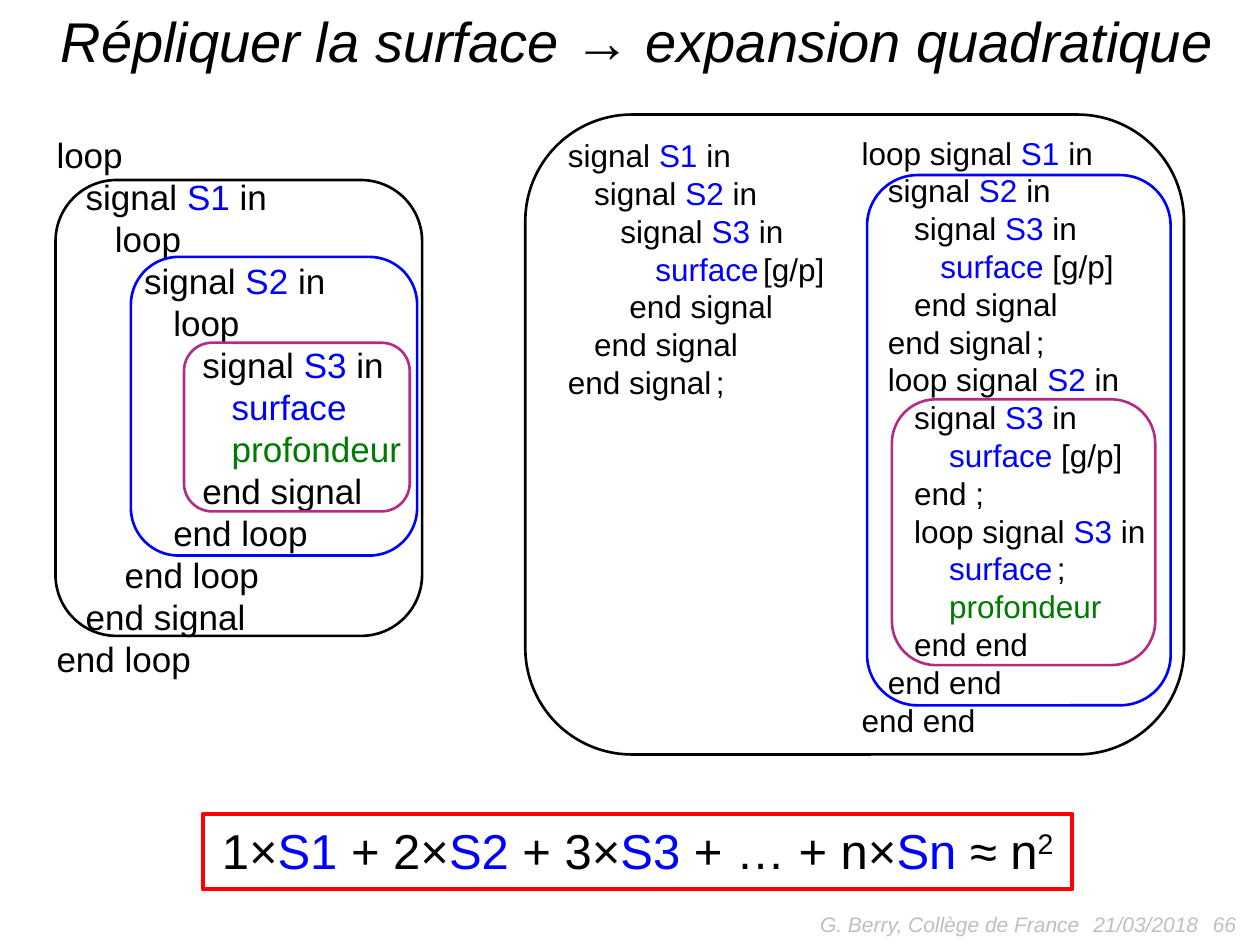
from dataclasses import dataclass

from pptx import Presentation
from pptx.dml.color import RGBColor
from pptx.enum.shapes import MSO_SHAPE
from pptx.enum.text import MSO_ANCHOR, PP_ALIGN
from pptx.util import Cm, Pt

BLACK, BLUE, GREEN = "000000", "0000FF", "007A00"
PURPLE, RED, GREY = "B22C85", "FF0000", "BFBFBF"
WORD_COLOURS = {"S1": BLUE, "S2": BLUE, "S3": BLUE, "Sn": BLUE,
                "surface": BLUE, "profondeur": GREEN}
SPACE_WIDTH = 0.278  # width of a space in Arial, in ems


@dataclass
class Box:
    left: float
    top: float
    width: float
    height: float

    def lengths(self) -> list:
        return [Cm(v) for v in (self.left, self.top, self.width, self.height)]


@dataclass
class Code:
    box: Box
    size: int
    lines: list  # (indent in spaces, fragments parted by "|")


@dataclass
class Frame:
    box: Box
    colour: str


@dataclass
class Label:
    box: Box
    text: str
    size: int
    align: PP_ALIGN
    colour: str = BLACK
    anchor: MSO_ANCHOR = MSO_ANCHOR.MIDDLE


def rgb(colour: str) -> RGBColor:
    return RGBColor.from_string(colour)


def set_format(target, values: dict) -> None:
    for name, value in values.items():
        setattr(target, name, value)


def add_run(paragraph, text: str, size: float, colour: str, italic=None):
    run = paragraph.add_run()
    run.text = text
    set_format(run.font, {"name": "Arial", "size": Pt(size), "italic": italic})
    run.font.color.rgb = rgb(colour)
    return run


def write_fragments(paragraph, text: str, size: int) -> None:
    """Colour each fragment by its word; "~" is a thin space, "^" a superscript."""
    for fragment in text.split("|"):
        if fragment == "~":
            add_run(paragraph, " ", size / 2, BLACK)
        elif fragment.startswith("^"):
            exponent = add_run(paragraph, fragment[1:], size, BLACK)
            exponent.font._element.set("baseline", "30000")
        else:
            colour = WORD_COLOURS.get(fragment.strip(), BLACK)
            add_run(paragraph, fragment, size, colour)


def add_label(slide, label: Label) -> None:
    frame = slide.shapes.add_textbox(*label.box.lengths()).text_frame
    set_format(frame, {"word_wrap": True, "vertical_anchor": label.anchor})
    paragraph = frame.paragraphs[0]
    paragraph.alignment = label.align
    add_run(paragraph, label.text, label.size, label.colour, italic=True)


def add_code(slide, code: Code) -> None:
    frame = slide.shapes.add_textbox(*code.box.lengths()).text_frame
    frame.word_wrap = True
    for number, (indent, text) in enumerate(code.lines):
        paragraph = frame.add_paragraph() if number else frame.paragraphs[0]
        margin = Pt(indent * SPACE_WIDTH * code.size)
        paragraph._p.get_or_add_pPr().set("marL", str(int(margin)))
        write_fragments(paragraph, text, code.size)


def add_outline(slide, preset: MSO_SHAPE, frame: Frame, weight: float):
    shape = slide.shapes.add_shape(preset, *frame.box.lengths())
    shape.shadow.inherit = False
    shape.fill.background()
    shape.line.color.rgb = rgb(frame.colour)
    shape.line.width = Pt(weight)
    return shape


LABELS = [
    Label(Box(0.3, 0, 25.1, 1.63), "Répliquer la surface → expansion quadratique",
          32, PP_ALIGN.CENTER, anchor=MSO_ANCHOR.TOP),
    Label(Box(13.97, 18.24, 8.05, 0.8), "G. Berry, Collège de France",
          12, PP_ALIGN.RIGHT, GREY),
    Label(Box(21.79, 18.24, 3.3, 0.8), "21/03/2018", 12, PP_ALIGN.LEFT, GREY),
    Label(Box(19.25, 18.24, 5.92, 0.8), "66", 12, PP_ALIGN.RIGHT, GREY),
]

CODES = [
    # Nested loops
    Code(Box(0.89, 2.57, 8.05, 11.38), 20, [
        (0, "loop"), (3, "signal |S1| in"),
        (6, "loop"), (9, "signal |S2| in"),
        (12, "loop"), (15, "signal |S3| in"),
        (18, "surface"), (18, "profondeur"),
        (15, "end signal"), (12, "end loop"), (7, "end loop"),
        (3, "end signal"), (0, "end loop")]),
    # Replicated surface
    Code(Box(11.2, 2.62, 6.5, 6.4), 18, [
        (0, "signal |S1| in"), (3, "signal |S2| in"), (6, "signal |S3| in"),
        (10, "surface|~|[g/p]"),
        (7, "end signal"), (3, "end signal"), (0, "end signal|~|;")]),
    # Expanded loops
    Code(Box(17.12, 2.57, 8.08, 12.57), 18, [
        (0, "loop signal |S1| in"), (3, "signal |S2| in"), (6, "signal |S3| in"),
        (9, "surface| [g/p]"), (6, "end signal"), (3, "end signal|~|;"),
        (3, "loop signal |S2| in"), (6, "signal |S3| in"),
        (10, "surface| [g/p]"), (6, "end ;"),
        (6, "loop signal |S3| in"), (10, "surface|~|;"), (10, "profondeur"),
        (6, "end end"), (3, "end end"), (0, "end end")]),
]

SCOPES = [
    Frame(Box(3.71, 6.91, 4.55, 3.4), PURPLE),
    Frame(Box(17.98, 8.05, 5.31, 5.36), PURPLE),
    Frame(Box(1.12, 3.63, 7.39, 9.19), BLACK),
    Frame(Box(2.64, 5.18, 5.77, 6.02), BLUE),
    Frame(Box(17.48, 3.53, 6.12, 10.69), BLUE),
    Frame(Box(10.59, 2.31, 13.28, 12.9), BLACK),
]

COST = Frame(Box(4.09, 16.41, 17.53, 1.52), RED)
COST_FORMULA = "1×|S1| + 2×|S2| + 3×|S3 |+ … + n×|Sn |≈ n|^2"


def main() -> None:
    deck = Presentation()
    set_format(deck, {"slide_width": Cm(25.4), "slide_height": Cm(19.05)})
    slide = deck.slides.add_slide(deck.slide_layouts[6])

    # Title and footer
    for label in LABELS:
        add_label(slide, label)

    # Programs and the scopes around their signals
    for code in CODES:
        add_code(slide, code)
    for scope in SCOPES:
        add_outline(slide, MSO_SHAPE.ROUNDED_RECTANGLE, scope, 1.5)

    # Total cost
    text = add_outline(slide, MSO_SHAPE.RECTANGLE, COST, 2.25).text_frame
    set_format(text, {"word_wrap": False, "vertical_anchor": MSO_ANCHOR.TOP,
                      "margin_top": Cm(0.13), "margin_bottom": Cm(0.2)})
    text.paragraphs[0].alignment = PP_ALIGN.CENTER
    write_fragments(text.paragraphs[0], COST_FORMULA, 28)

    deck.save("out.pptx")


if __name__ == "__main__":
    main()
